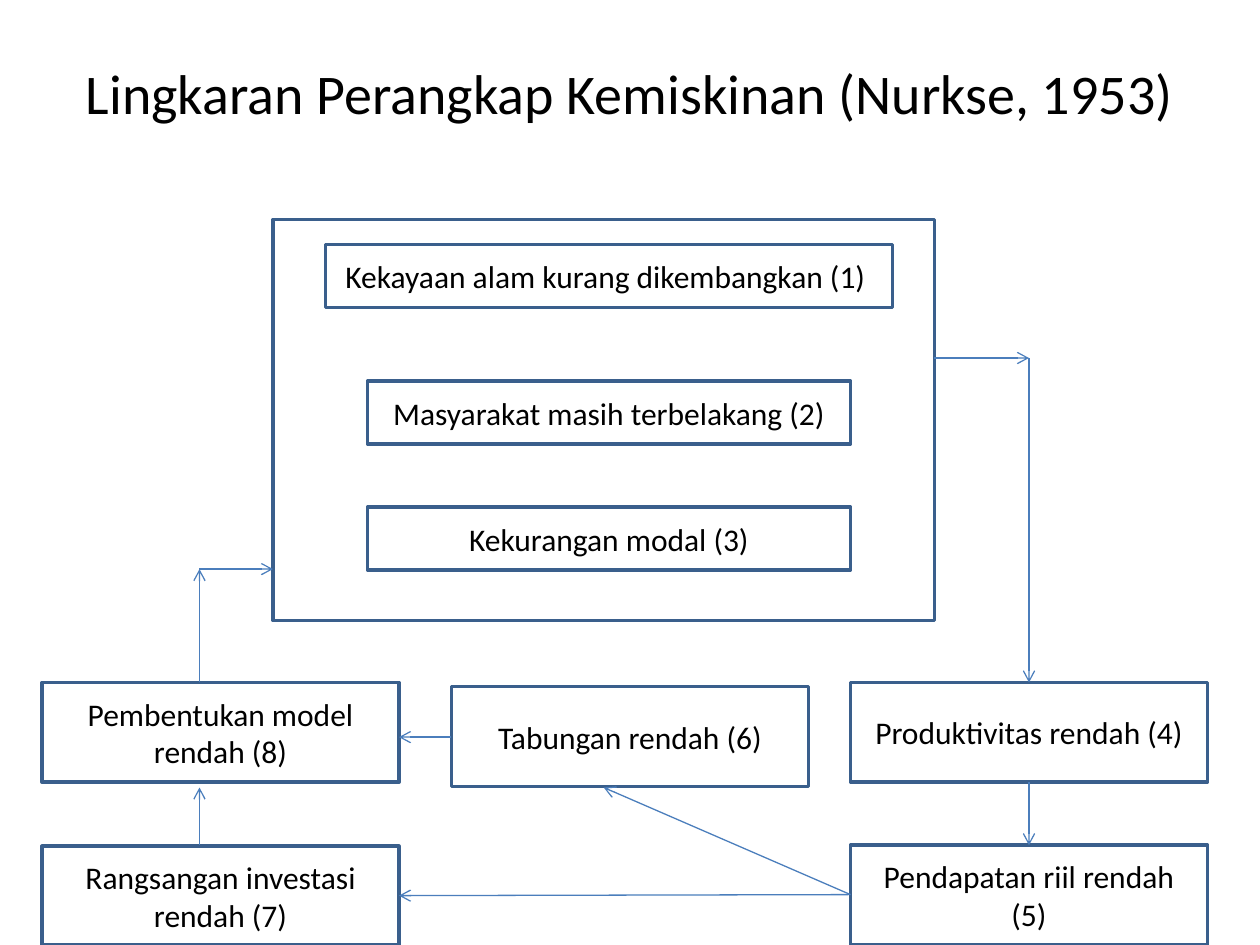
"""Build the slide on Nurkse's vicious circle of poverty."""
import lxml.etree
import pptx
import pptx.dml.color
import pptx.enum.shapes
import pptx.enum.text
import pptx.oxml.ns
import pptx.util

THEME = {
    "font": "Calibri",
    "text": pptx.dml.color.RGBColor.from_string("000000"),
    "border": pptx.dml.color.RGBColor.from_string("3A5F8C"),
    "arrow": pptx.dml.color.RGBColor.from_string("4B7EBC"),
    "title_size": pptx.util.Pt(32),
    "box_size": pptx.util.Pt(18),
    "border_width": pptx.util.Pt(2),
    "arrow_width": pptx.util.Pt(0.75),
}

prs = pptx.Presentation()
prs.slide_width = pptx.util.Inches(10)
prs.slide_height = pptx.util.Inches(7.5)
UNIT = prs.slide_width / 120


def grid(*cells):
    """Turn grid columns and rows into slide lengths."""
    return [round(cell * UNIT) for cell in cells]


def set_text(sp, text, size):
    """Write centred text in the theme's font."""
    tf = sp.text_frame
    tf.word_wrap = True
    tf.vertical_anchor = pptx.enum.text.MSO_ANCHOR.MIDDLE
    tf.text = text
    p = tf.paragraphs[0]
    p.alignment = pptx.enum.text.PP_ALIGN.CENTER
    for r in p.runs:
        r.font.name = THEME["font"]
        r.font.size = size
        r.font.color.rgb = THEME["text"]


s = prs.slides.add_slide(prs.slide_layouts[5])
title = s.shapes.title
title.left, title.top, title.width, title.height = grid(6, 3.6, 108, 10.4)
set_text(title, "Lingkaran Perangkap Kemiskinan (Nurkse, 1953)", THEME["title_size"])

LEFT, MIDDLE, RIGHT = 4, 43, 81
BOX_W, BOX_H = 34, 9.5
UPPER, LOWER = 65, 80.5
FRAME_LEFT, FRAME_TOP, FRAME_W, FRAME_H = 26, 20.9, 63, 38.2
FRAME_RIGHT = FRAME_LEFT + FRAME_W
LEFT_EDGE = LEFT + BOX_W
RISE, FALL = 19, 98
ENTRY, EXIT = 54.2, 34.1
SAVINGS, INCOME = 70.2, 85.2

boxes = [
    ("Kekayaan alam kurang dikembangkan (1) ", 31, 23.3, 54, 6),
    ("Masyarakat masih terbelakang (2)", 35, 36.3, 46, 6),
    ("Tabungan rendah (6)", MIDDLE, UPPER + 0.4, BOX_W, BOX_H),
    ("Kekurangan modal (3)", 35, 48.3, 46, 6),
    ("Rangsangan investasi rendah (7)", LEFT, LOWER + 0.1, BOX_W, BOX_H - 0.1),
    ("Pendapatan riil rendah (5)", RIGHT, LOWER, BOX_W, BOX_H),
    ("Produktivitas rendah (4)", RIGHT, UPPER, BOX_W, BOX_H),
    ("Pembentukan model rendah (8)", LEFT, UPPER, BOX_W, BOX_H),
    ("", FRAME_LEFT, FRAME_TOP, FRAME_W, FRAME_H),
]
arrows = [
    (FALL, UPPER + BOX_H, FALL, LOWER),
    (RIGHT, INCOME, LEFT_EDGE, INCOME + 0.1),
    (FALL, EXIT, FALL, UPPER),
    (MIDDLE, SAVINGS, LEFT_EDGE, SAVINGS),
    (RISE, LOWER, RISE, 75),
    (RISE, UPPER, RISE, ENTRY),
    (RISE, ENTRY, FRAME_LEFT, ENTRY),
    (FRAME_RIGHT, EXIT, FALL, EXIT),
    (RIGHT, INCOME, 57.5, 75),
]

diagram = s.shapes.add_group_shape()
for text, *cells in boxes:
    sp = diagram.shapes.add_shape(pptx.enum.shapes.MSO_SHAPE.RECTANGLE, *grid(*cells))
    sp.shadow.inherit = False
    sp.fill.background()
    sp.line.color.rgb = THEME["border"]
    sp.line.width = THEME["border_width"]
    if text:
        set_text(sp, text, THEME["box_size"])

for cells in arrows:
    line = diagram.shapes.add_connector(pptx.enum.shapes.MSO_CONNECTOR.STRAIGHT, *grid(*cells))
    line.line.color.rgb = THEME["arrow"]
    line.line.width = THEME["arrow_width"]
    ln = line.line._get_or_add_ln()
    lxml.etree.SubElement(ln, pptx.oxml.ns.qn("a:tailEnd"), type="arrow")
    lxml.etree.SubElement(line._element.spPr, pptx.oxml.ns.qn("a:effectLst"))

prs.save("out.pptx")
